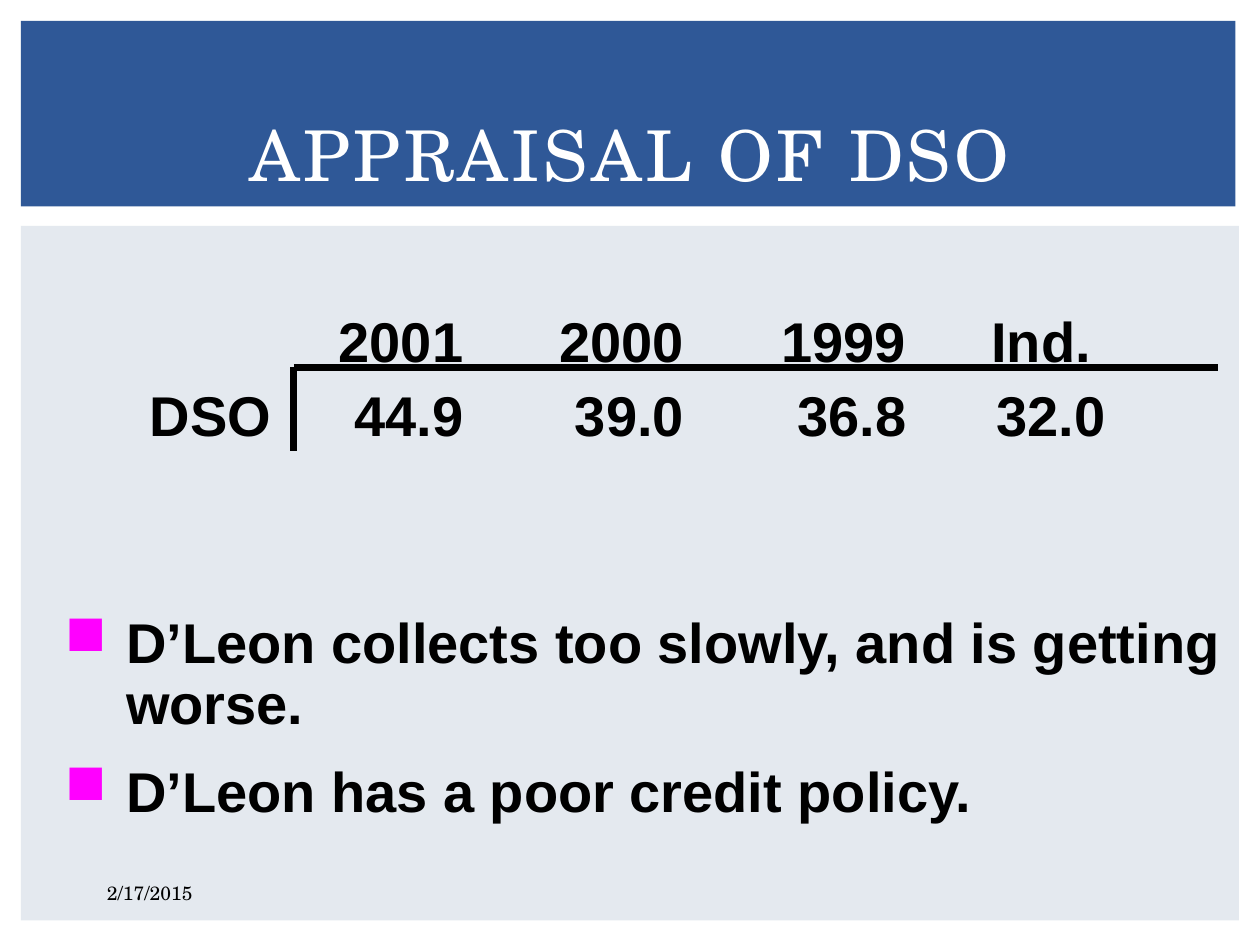
"""Builds the DSO appraisal slide."""
from lxml.etree import SubElement
from pptx import Presentation
from pptx.dml.color import RGBColor
from pptx.enum.shapes import MSO_CONNECTOR, MSO_SHAPE
from pptx.enum.text import MSO_ANCHOR, PP_ALIGN
from pptx.oxml.ns import qn
from pptx.util import Pt

BLUE = RGBColor(0x2F, 0x58, 0x97)
PALE = RGBColor(0xE4, 0xE9, 0xEF)
WHITE = RGBColor(0xFF, 0xFF, 0xFF)
BLACK = RGBColor(0, 0, 0)
MAGENTA = RGBColor(0xFF, 0, 0xFF)
SERIF, SANS = "TeX Gyre Schola", "Arial"
HEADING_TABS = (108, 234, 361, 481)
VALUE_TABS = (117, 243, 370, 484)


def write(p, text, font=SANS, size=32, color=BLACK, bold=False, align=PP_ALIGN.LEFT,
          line=1.0, before=0, spacing=0, tabs=(), bullet=None, indent=35):
    p.alignment, p.line_spacing, p.space_before = align, line, Pt(before)
    pPr = p._p.get_or_add_pPr()
    if bullet:
        pPr.set("marL", str(Pt(indent)))
        pPr.set("indent", str(Pt(-indent)))
        clr = SubElement(pPr, qn("a:buClr"))
        SubElement(clr, qn("a:srgbClr"), val=str(MAGENTA))
        SubElement(pPr, qn("a:buChar"), char=bullet)
    if tabs:
        stops = SubElement(pPr, qn("a:tabLst"))
        for pos in tabs:
            SubElement(stops, qn("a:tab"), pos=str(Pt(pos)), algn="l")
    r = p.add_run()
    r.text = text
    r.font.name, r.font.size, r.font.bold = font, Pt(size), bold
    r.font.color.rgb = color
    if spacing:
        r._r.get_or_add_rPr().set("spc", str(spacing * 100))


class Deck:
    def __init__(self, prs):
        self.s = prs.slides.add_slide(prs.slide_layouts[6])

    def panel(self, x, y, w, h, color):
        sp = self.s.shapes.add_shape(MSO_SHAPE.RECTANGLE, Pt(x), Pt(y), Pt(w), Pt(h))
        sp.shadow.inherit = False
        sp.fill.solid()
        sp.fill.fore_color.rgb = color
        sp.line.fill.background()

    def text(self, x, y, w, h, paragraphs, anchor=MSO_ANCHOR.TOP, **style):
        tf = self.s.shapes.add_textbox(Pt(x), Pt(y), Pt(w), Pt(h)).text_frame
        tf.word_wrap, tf.vertical_anchor = True, anchor
        for i, (text, extra) in enumerate(paragraphs):
            p = tf.add_paragraph() if i else tf.paragraphs[0]
            write(p, text, **style, **extra)

    def rule(self, x1, y1, x2, y2):
        sp = self.s.shapes.add_connector(MSO_CONNECTOR.STRAIGHT, Pt(x1), Pt(y1), Pt(x2), Pt(y2))
        sp.line.color.rgb, sp.line.width = BLACK, Pt(4)
        SubElement(sp._element.spPr, qn("a:effectLst"))


def main():
    prs = Presentation()
    prs.slide_width, prs.slide_height = Pt(720), Pt(540)
    deck = Deck(prs)
    deck.panel(12, 129, 696, 397, PALE)
    deck.panel(12, 12, 694, 106, BLUE)
    deck.text(54, 60, 612, 55, [("APPRAISAL OF DSO", {})], MSO_ANCHOR.MIDDLE,
              font=SERIF, size=40, color=WHITE, align=PP_ALIGN.CENTER, spacing=2)
    deck.text(30, 348, 690, 130, [
        ("D’Leon collects too slowly, and is getting worse.", {}),
        ("D’Leon has a poor credit policy.", {"before": 16}),
    ], bold=True, line=0.9, bullet="■")
    deck.text(78.5, 168, 623.5, 91, [
        ("\t2001\t2000\t1999\tInd.", {"tabs": HEADING_TABS}),
        ("DSO\t44.9\t39.0\t36.8\t32.0", {"tabs": VALUE_TABS}),
    ], bold=True, line=1.1)
    deck.rule(168, 210, 696, 210)
    deck.rule(168, 210, 168, 258)
    deck.text(54, 492, 150, 36, [("2/17/2015", {})], MSO_ANCHOR.MIDDLE, font=SERIF, size=11)
    prs.save("out.pptx")


if __name__ == "__main__":
    main()
